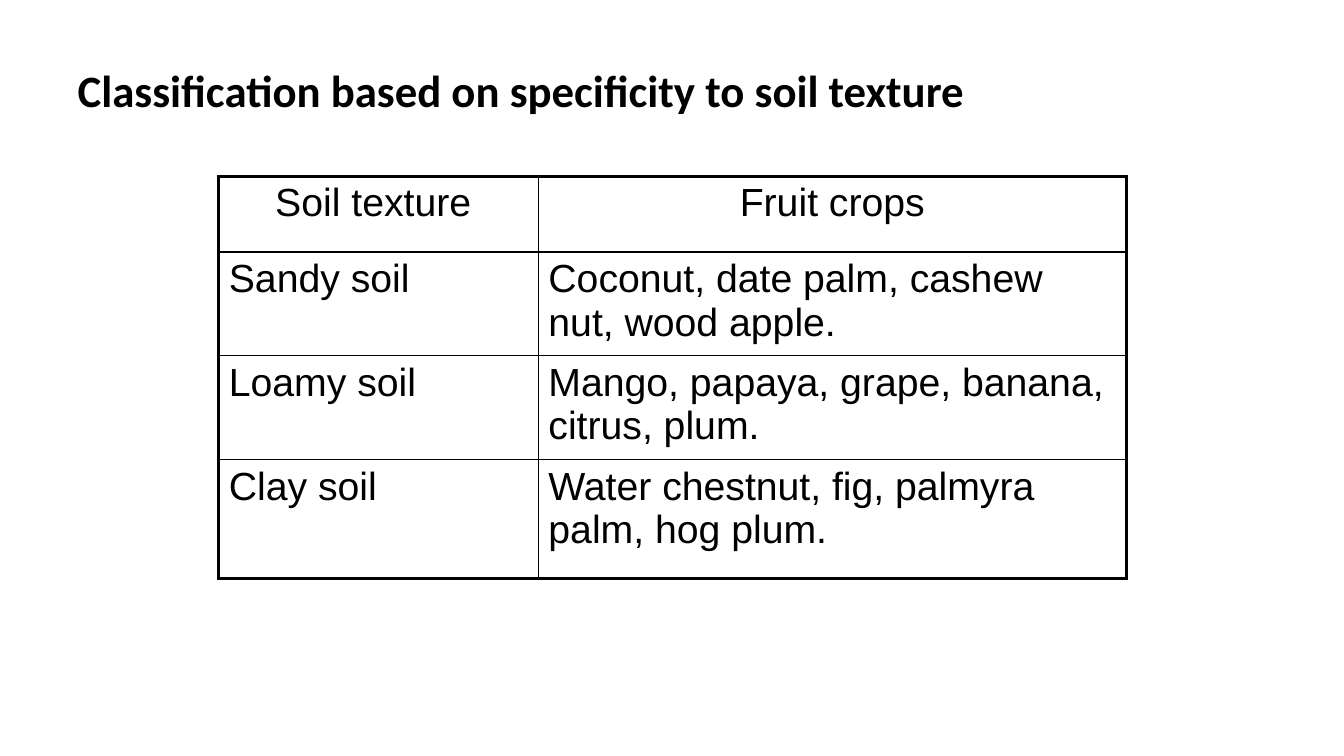
"""Build a slide with a table of fruit crops classified by soil texture."""
from lxml.etree import SubElement
from pptx import Presentation
from pptx.dml.color import RGBColor
from pptx.enum.text import MSO_ANCHOR, PP_ALIGN
from pptx.oxml.ns import qn
from pptx.util import Inches, Pt

COLORS = {"text": "000000", "border": "000000", "cell": "FFFFFF"}
SOIL_ROWS = [
    ("Soil texture ", "Fruit crops"),
    ("Sandy soil", "Coconut, date palm, cashew nut, wood apple."),
    ("Loamy soil", "Mango, papaya, grape, banana, citrus, plum."),
    ("Clay soil", "Water chestnut, fig, palmyra palm, hog plum."),
]
COLUMN_WIDTHS = [3.17, 5.83]
ROW_HEIGHTS = [0.75, 1.03, 1.03, 1.18]
OUTER_BORDER, INNER_BORDER = 2.25, 1


def format_paragraph(paragraph, name, size, bold, alignment):
    paragraph.alignment = alignment
    font = paragraph.font
    font.name, font.size, font.bold = name, Pt(size), bold
    font.color.rgb = RGBColor.from_string(COLORS["text"])


def add_title(slide, text):
    title = slide.shapes.title
    title.left, title.top = Inches(0.67), Inches(0.3)
    title.width, title.height = Inches(12), Inches(1.25)
    frame = title.text_frame
    frame.text = text
    frame.vertical_anchor = MSO_ANCHOR.MIDDLE
    paragraph = frame.paragraphs[0]
    format_paragraph(paragraph, "Calibri", 32, True, PP_ALIGN.LEFT)
    paragraph.line_spacing = 0.9


def set_space_before(paragraph, percent):
    properties = paragraph._p.get_or_add_pPr()
    spacing = SubElement(properties, qn("a:spcBef"))
    SubElement(spacing, qn("a:spcPct"), val=str(percent * 1000))
    properties.insert(0, spacing)


def set_borders(cell, outer_sides):
    properties = cell._tc.get_or_add_tcPr()
    for side, is_outer in outer_sides.items():
        width = Pt(OUTER_BORDER if is_outer else INNER_BORDER)
        line = SubElement(properties, qn(f"a:ln{side}"), w=str(width))
        fill = SubElement(line, qn("a:solidFill"))
        SubElement(fill, qn("a:srgbClr"), val=COLORS["border"])


def fill_cell(cell, text, alignment):
    cell.fill.solid()
    cell.fill.fore_color.rgb = RGBColor.from_string(COLORS["cell"])
    cell.text = text
    paragraph = cell.text_frame.paragraphs[0]
    format_paragraph(paragraph, "Arial", 28, False, alignment)
    set_space_before(paragraph, 20)


def add_soil_table(slide):
    last_row, last_column = len(SOIL_ROWS) - 1, len(COLUMN_WIDTHS) - 1
    table = slide.shapes.add_table(
        len(SOIL_ROWS), len(COLUMN_WIDTHS), Inches(2.17), Inches(1.75),
        Inches(sum(COLUMN_WIDTHS)), Inches(sum(ROW_HEIGHTS))).table
    table.first_row = table.horz_banding = False
    for column, width in zip(table.columns, COLUMN_WIDTHS):
        column.width = Inches(width)
    for row, height in zip(table.rows, ROW_HEIGHTS):
        row.height = Inches(height)
    for row_index, texts in enumerate(SOIL_ROWS):
        alignment = PP_ALIGN.LEFT if row_index else PP_ALIGN.CENTER
        for column_index, text in enumerate(texts):
            cell = table.cell(row_index, column_index)
            set_borders(cell, {
                "L": column_index == 0, "R": column_index == last_column,
                "T": row_index == 0, "B": row_index == last_row})
            fill_cell(cell, text, alignment)


def main():
    presentation = Presentation()
    presentation.slide_width = Inches(13.33)
    presentation.slide_height = Inches(7.5)
    slide = presentation.slides.add_slide(presentation.slide_layouts[5])
    add_title(slide, "Classification based on specificity to soil texture")
    add_soil_table(slide)
    presentation.save("out.pptx")


if __name__ == "__main__":
    main()
